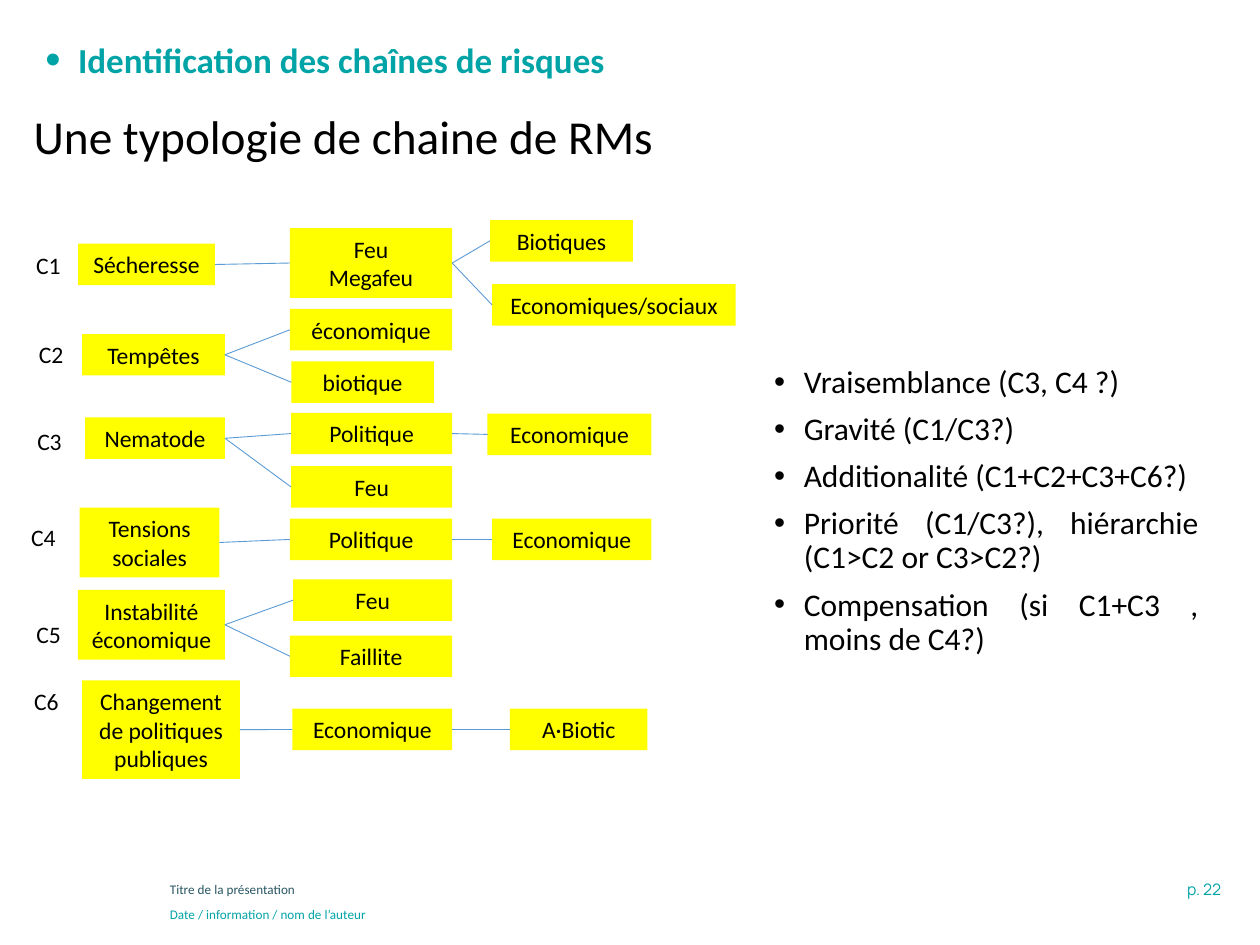
import pptx
import pptx.dml.color
import pptx.enum.shapes
import pptx.enum.text
import pptx.oxml.ns
import pptx.oxml.xmlchemy
import pptx.util
from dataclasses import dataclass

Pt = pptx.util.Pt
RGB = pptx.dml.color.RGBColor.from_string
ALIGN = pptx.enum.text.PP_ALIGN
ANCHOR = pptx.enum.text.MSO_ANCHOR
SHAPE = pptx.enum.shapes.MSO_SHAPE
CONNECTOR = pptx.enum.shapes.MSO_CONNECTOR
OxmlElement = pptx.oxml.xmlchemy.OxmlElement
qn = pptx.oxml.ns.qn


@dataclass(frozen=True)
class Theme:
    font: str = "Calibri"
    page_font: str = "Manrope"
    ink: str = "000000"
    teal: str = "00A3A6"
    slate: str = "275662"
    box: str = "FFFF00"
    link: str = "5B9BD5"
    title: float = 27
    heading: float = 20
    bullets: float = 18
    label: float = 13.5
    page: float = 9
    footer: float = 7.5


theme = Theme()


def write(s, text, size, color=theme.ink, align=ALIGN.LEFT, font=theme.font, bold=False):
    tf = s.text_frame
    tf.word_wrap = True
    tf.text = text
    for p in tf.paragraphs:
        p.alignment = align
        for r in p.runs:
            r.font.name = font
            r.font.size = Pt(size)
            r.font.bold = bold
            r.font.color.rgb = RGB(color)
    return tf


def add_bullet(p, indent, percent=100):
    pPr = p._p.get_or_add_pPr()
    pPr.set("marL", str(Pt(indent)))
    pPr.set("indent", str(-Pt(indent)))
    for tag, name, value in (
        ("a:buSzPct", "val", str(percent * 1000)),
        ("a:buFont", "typeface", "Arial"),
        ("a:buChar", "char", "•"),
    ):
        pPr.append(OxmlElement(tag))
        pPr[-1].set(name, value)


prs = pptx.Presentation()
prs.slide_width = Pt(720)
prs.slide_height = Pt(540)
slide = prs.slides.add_slide(prs.slide_layouts[6])
shapes = slide.shapes

s = shapes.add_textbox(Pt(540.7), Pt(499), Pt(164.2), Pt(18))
write(s, "p. 22", theme.page, theme.teal, ALIGN.RIGHT, theme.page_font)

for text, top, color in (
    ("Titre de la présentation", 500.4, theme.slate),
    ("Date / information / nom de l’auteur", 514.4, theme.teal),
):
    s = shapes.add_textbox(Pt(90), Pt(top), Pt(528.5), Pt(16.5))
    write(s, text, theme.footer, color)

s = shapes.add_textbox(Pt(12.2), Pt(52.6), Pt(669.6), Pt(54))
tf = write(s, "Une typologie de chaine de RMs", theme.title)
tf.vertical_anchor = ANCHOR.MIDDLE
tf.paragraphs[0].line_spacing = 0.9

s = shapes.add_textbox(Pt(25.9), Pt(22.3), Pt(602.6), Pt(25.9))
tf = write(s, "Identification des chaînes de risques", theme.heading, theme.teal, bold=True)
tf.vertical_anchor = ANCHOR.MIDDLE
tf.margin_left, tf.margin_right = 0, Pt(3.6)
tf.margin_top = tf.margin_bottom = Pt(2.2)
tf.paragraphs[0].line_spacing = 0.9
add_bullet(tf.paragraphs[0], 18.7, 125)

labels = [
    ("C1", 13.5, 139.9),
    ("C2", 15.2, 190.9),
    ("C3", 14.2, 240.6),
    ("C4", 10.7, 295.4),
    ("C5", 13.7, 350.5),
    ("C6", 12.4, 389),
]
for text, left, top in labels:
    s = shapes.add_textbox(Pt(left), Pt(top), Pt(34.6), Pt(23.7))
    write(s, text, theme.label)

chain_boxes = [
    (0, "Sécheresse", 1, 44.6, 139.3, 78.2),
    (1, "Feu\nMegafeu", 2, 165.7, 130.3, 92.7),
    (2, "Biotiques", 1, 280, 125.8, 81.6),
    (2, "Economiques/sociaux", 1, 281.2, 162.4, 139.2),
    (0, "Tempêtes", 1, 46.9, 190.9, 81.6),
    (1, "économique", 1, 165.7, 176.6, 92.7),
    (1, "biotique", 1, 166.5, 206.6, 81.4),
    (0, "Nematode", 1, 48.6, 238.6, 80),
    (1, "Politique", 1, 166.3, 235.9, 92.1),
    (2, "Economique", 1, 278.6, 236.4, 93.7),
    (1, "Feu", 1, 166.3, 266.4, 92.1),
    (0, "Tensions sociales", 2, 45.5, 290, 79.9),
    (1, "Politique", 1, 165.7, 296.4, 92.7),
    (2, "Economique", 1, 281.2, 296.4, 91.1),
    (0, "Instabilité économique", 2, 44.6, 337, 83.9),
    (1, "Feu", 1, 167.5, 331.1, 90.9),
    (1, "Faillite", 1, 165.7, 363.2, 92.7),
    (0, "Changement de politiques publiques", 3, 46.9, 388.8, 90.2),
    (1, "Economique", 1, 167.1, 405, 91.3),
    (2, "A·Biotic", 1, 291.4, 405, 78.6),
]
latest = {}
for level, text, lines, left, top, width in chain_boxes:
    height = 7.4 + 16.3 * lines
    s = shapes.add_shape(SHAPE.RECTANGLE, Pt(left), Pt(top), Pt(width), Pt(height))
    s.shadow.inherit = False
    s.fill.solid()
    s.fill.fore_color.rgb = RGB(theme.box)
    s.line.fill.background()
    write(s, text, theme.label, align=ALIGN.CENTER)
    latest[level] = s
    if level > 0:
        link = shapes.add_connector(CONNECTOR.STRAIGHT, 0, 0, 0, 0)
        link.begin_connect(latest[level - 1], 3)
        link.end_connect(s, 1)
        link.line.color.rgb = RGB(theme.link)
        link.line.width = Pt(0.5)
        link._element.find(qn("p:spPr")).append(OxmlElement("a:effectLst"))

criteria = [
    "Vraisemblance (C3, C4 ?)",
    "Gravité (C1/C3?)",
    "Additionalité (C1+C2+C3+C6?)",
    "Priorité (C1/C3?), hiérarchie (C1>C2 or C3>C2?)",
    "Compensation (si C1+C3 , moins de C4?)",
]
s = shapes.add_textbox(Pt(437), Pt(206.6), Pt(253.4), Pt(187.2))
tf = write(s, "\n".join(criteria), theme.bullets, align=ALIGN.JUSTIFY)
tf.margin_left = tf.margin_right = Pt(5.4)
tf.margin_top = tf.margin_bottom = Pt(2.7)
for i, p in enumerate(tf.paragraphs):
    p.line_spacing = 0.9
    if i > 0:
        p.space_before = Pt(7.5)
    add_bullet(p, 16.9)

prs.save("out.pptx")
